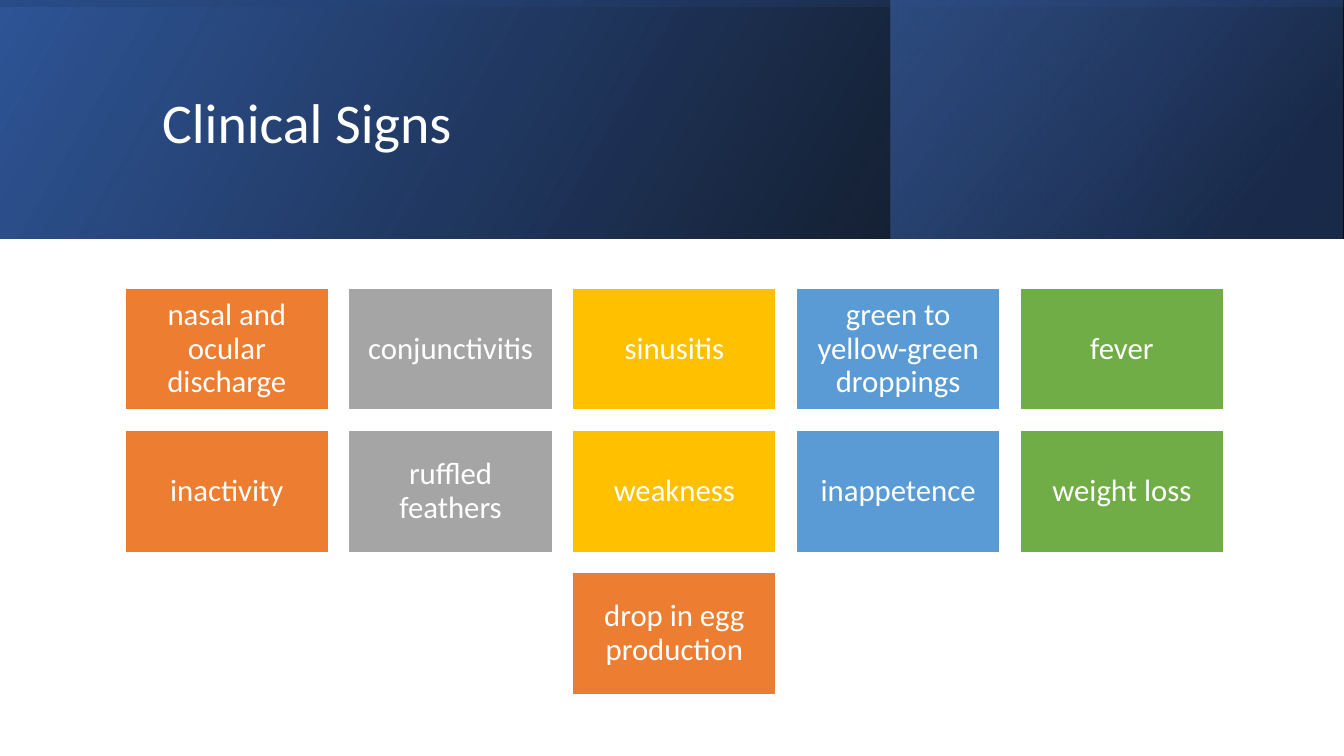
"""Build the Clinical Signs slide: a gradient title band above a grid of sign boxes."""
from lxml.etree import SubElement
from pptx import Presentation
from pptx.dml.color import RGBColor
from pptx.enum.shapes import MSO_SHAPE
from pptx.enum.text import MSO_ANCHOR, PP_ALIGN
from pptx.oxml.ns import qn
from pptx.util import Inches, Pt

COLORS = {
    "white": "FFFFFF", "black": "000000", "navy": "203864",
    "deep_blue": "2F5597", "bright_blue": "4472C4",
    "orange": "ED7D31", "gray": "A5A5A5", "gold": "FFC000",
    "sky": "5B9BD5", "green": "70AD47",
}


def add_rectangle(left, top, width, height):
    shape = slide.shapes.add_shape(
        MSO_SHAPE.RECTANGLE, Inches(left), Inches(top), Inches(width), Inches(height))
    shape.shadow.inherit = False
    return shape


def write_text(shape, text, size, alignment):
    text_frame = shape.text_frame
    text_frame.word_wrap = True
    text_frame.vertical_anchor = MSO_ANCHOR.MIDDLE
    text_frame.text = text
    paragraph = text_frame.paragraphs[0]
    paragraph.alignment = alignment
    paragraph.line_spacing = 0.9
    font = paragraph.runs[0].font
    font.name = "Calibri"
    font.size = Pt(size)
    font.color.rgb = RGBColor.from_string(COLORS["white"])


presentation = Presentation()
presentation.slide_width = Inches(13.333)
presentation.slide_height = Inches(7.5)
slide = presentation.slides.add_slide(presentation.slide_layouts[6])

# Each band: position, rotation, counter-clockwise angle, stops of (place, colour, opacity %)
bands = [
    ((0, 0, 13.33, 2.37), 0, 30, [(0, "black", 96), (1, "deep_blue", 100)]),
    ((8.84, 0, 4.48, 2.37), 0, 40, [(0.19, "navy", 68), (1, "bright_blue", 48)]),
    ((5.48, -5.48, 2.37, 13.33), 270, 10, [(0.23, "deep_blue", 16), (0.99, "black", 45)]),
]
for position, rotation, angle, stops in bands:
    band = add_rectangle(*position)
    band.rotation = rotation
    band.element.spPr.get_or_add_xfrm().set("flipH", "1")
    band.line.fill.background()
    band.fill.gradient()
    band.fill.gradient_angle = angle
    for gradient_stop, (place, color, opacity) in zip(band.fill.gradient_stops, stops):
        gradient_stop.position = place
        gradient_stop.color.rgb = RGBColor.from_string(COLORS[color])
    for color_element, (place, color, opacity) in zip(
            band.element.spPr.iter(qn("a:srgbClr")), stops):
        SubElement(color_element, qn("a:alpha")).set("val", str(opacity * 1000))

title = slide.shapes.add_textbox(Inches(1.51), Inches(0.38), Inches(10.63), Inches(1.72))
write_text(title, "Clinical Signs", 40, PP_ALIGN.LEFT)

sign_rows = [
    ["nasal and ocular discharge", "conjunctivitis", "sinusitis",
     "green to yellow-green droppings", "fever"],
    ["inactivity", "ruffled feathers", "weakness", "inappetence", "weight loss"],
    ["drop in egg production"],
]
box_colors = ["orange", "gray", "gold", "sky", "green"]
grid_left, grid_top = 1.24, 2.86
box_width, box_height, gap = 2.02, 1.21, 0.2

for row, signs in enumerate(sign_rows):
    indent = (len(box_colors) - len(signs)) / 2
    for column, (sign, color) in enumerate(zip(signs, box_colors)):
        box = add_rectangle(
            grid_left + (column + indent) * (box_width + gap),
            grid_top + row * (box_height + gap), box_width, box_height)
        box.fill.solid()
        box.fill.fore_color.rgb = RGBColor.from_string(COLORS[color])
        box.line.color.rgb = RGBColor.from_string(COLORS["white"])
        box.line.width = Pt(1)
        write_text(box, sign, 22, PP_ALIGN.CENTER)
        box.text_frame.margin_left = box.text_frame.margin_right = Inches(0.09)
        box.text_frame.margin_top = box.text_frame.margin_bottom = Inches(0.09)

presentation.save("out.pptx")
